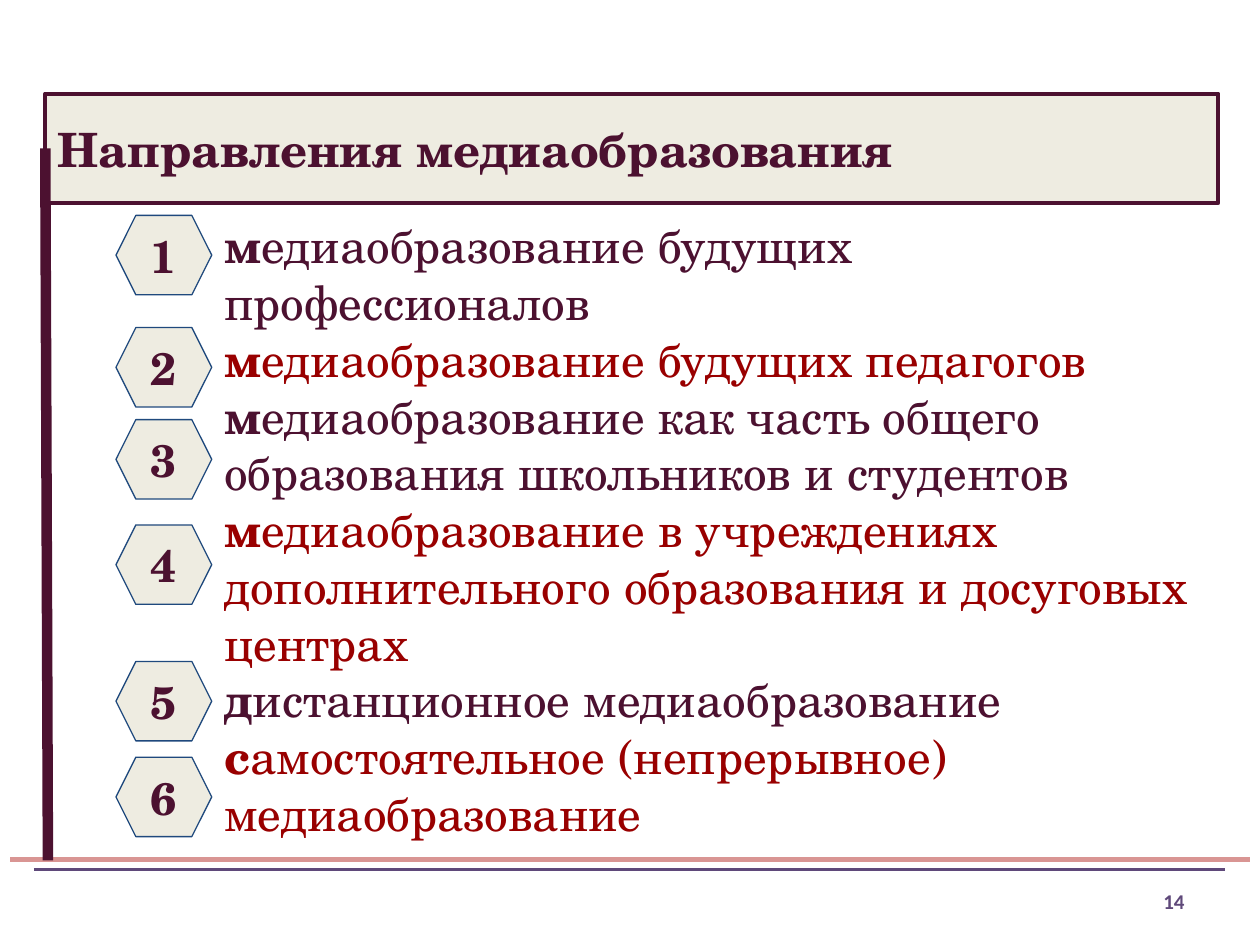
from dataclasses import dataclass

from pptx import Presentation
from pptx.dml.color import RGBColor
from pptx.enum.shapes import MSO_CONNECTOR, MSO_SHAPE
from pptx.enum.text import MSO_ANCHOR, PP_ALIGN
from pptx.oxml.ns import qn
from pptx.util import Pt


@dataclass(frozen=True)
class Theme:
    plum: RGBColor = RGBColor.from_string("4C1130")
    red: RGBColor = RGBColor.from_string("990000")
    cream: RGBColor = RGBColor.from_string("EEECE1")
    navy: RGBColor = RGBColor.from_string("1F497D")
    pink: RGBColor = RGBColor.from_string("D99593")
    violet: RGBColor = RGBColor.from_string("5F497A")
    serif: str = "TeX Gyre Schola"
    sans: str = "Calibri"
    text_size: float = 27
    badge_size: float = 26
    number_size: float = 12


class SlideBuilder:
    def __init__(self, slide, theme):
        self.slide = slide
        self.theme = theme

    def set_font(self, paragraph, name, size, color, bold=None):
        font = paragraph.font
        font.name, font.size, font.bold = name, Pt(size), bold
        font.color.rgb = color

    def set_frame(self, shape, anchor, inset):
        frame = shape.text_frame
        frame.word_wrap = True
        frame.vertical_anchor = anchor
        frame.margin_left = frame.margin_right = Pt(7.2)
        frame.margin_top = frame.margin_bottom = Pt(inset)
        return frame

    def line(self, start, end, color, width):
        connector = self.slide.shapes.add_connector(
            MSO_CONNECTOR.STRAIGHT, *map(Pt, start + end))
        connector.line.color.rgb = color
        connector.line.width = Pt(width)
        properties = connector._element.spPr
        properties.append(properties.makeelement(qn("a:effectLst"), {}))
        return connector

    def panel(self, kind, box, text, size, border, width, inset, align):
        """Add a cream preset shape with one line of bold text."""
        shape = self.slide.shapes.add_shape(kind, *map(Pt, box))
        shape.shadow.inherit = False
        shape.fill.solid()
        shape.fill.fore_color.rgb = self.theme.cream
        shape.line.color.rgb = border
        shape.line.width = Pt(width)
        paragraph = self.set_frame(shape, MSO_ANCHOR.MIDDLE, inset).paragraphs[0]
        paragraph.text = text
        paragraph.alignment = align
        self.set_font(paragraph, self.theme.serif, size, self.theme.plum, True)
        return shape

    def title(self, box, text):
        return self.panel(MSO_SHAPE.RECTANGLE, box, text, self.theme.text_size,
                          self.theme.plum, 2.25, 3.6, PP_ALIGN.LEFT)

    def badge(self, top, text):
        hexagon = self.panel(MSO_SHAPE.HEXAGON, (66.3, top, 54.7, 45.4), text,
                             self.theme.badge_size, self.theme.navy, 0.75, 7.2,
                             PP_ALIGN.CENTER)
        hexagon.adjustments[0] = 0.25

    def directions(self, box, items):
        """List the items in alternating colours, each with a bold initial."""
        shape = self.slide.shapes.add_textbox(*map(Pt, box))
        frame = self.set_frame(shape, MSO_ANCHOR.TOP, 7.2)
        colors = (self.theme.plum, self.theme.red)
        for index, item in enumerate(items):
            paragraph = frame.add_paragraph() if index else frame.paragraphs[0]
            self.set_font(paragraph, self.theme.serif, self.theme.text_size,
                          colors[index % 2])
            for text, bold in ((item[0], True), (item[1:], False)):
                run = paragraph.add_run()
                run.text = text
                run.font.bold = bold

    def page_number(self, box, text):
        shape = self.slide.shapes.add_textbox(*map(Pt, box))
        paragraph = self.set_frame(shape, MSO_ANCHOR.MIDDLE, 3.6).paragraphs[0]
        paragraph.text = text
        paragraph.alignment = PP_ALIGN.RIGHT
        self.set_font(paragraph, self.theme.sans, self.theme.number_size,
                      self.theme.violet, True)


DIRECTIONS = (
    (123.1, "медиаобразование будущих профессионалов"),
    (187.2, "медиаобразование будущих педагогов"),
    (239.8, "медиаобразование как часть общего образования школьников и студентов"),
    (300, "медиаобразование в учреждениях дополнительного образования "
          "и досуговых центрах"),
    (378, "дистанционное медиаобразование"),
    (432.7, "самостоятельное (непрерывное) медиаобразование"),
)


def main():
    presentation = Presentation()
    presentation.slide_width, presentation.slide_height = Pt(720), Pt(540)
    theme = Theme()
    builder = SlideBuilder(
        presentation.slides.add_slide(presentation.slide_layouts[6]), theme)

    builder.line((5.8, 491), (714.2, 491), theme.pink, 3)
    builder.line((19.4, 496.8), (699.8, 496.8), theme.violet, 2)
    title = builder.title((25.9, 53.5, 670.3, 62.6), "Направления медиаобразования")
    builder.page_number((638, 500.4, 46, 28.8), "14")
    builder.directions((121, 116.6, 585.4, 374.4), [text for _, text in DIRECTIONS])
    for number, (top, _) in enumerate(DIRECTIONS, 1):
        builder.badge(top, str(number))
    spine = builder.line((25.9, 84.8), (27.4, 491.6), theme.plum, 6)
    spine.begin_connect(title, 1)

    presentation.save("out.pptx")


if __name__ == "__main__":
    main()
